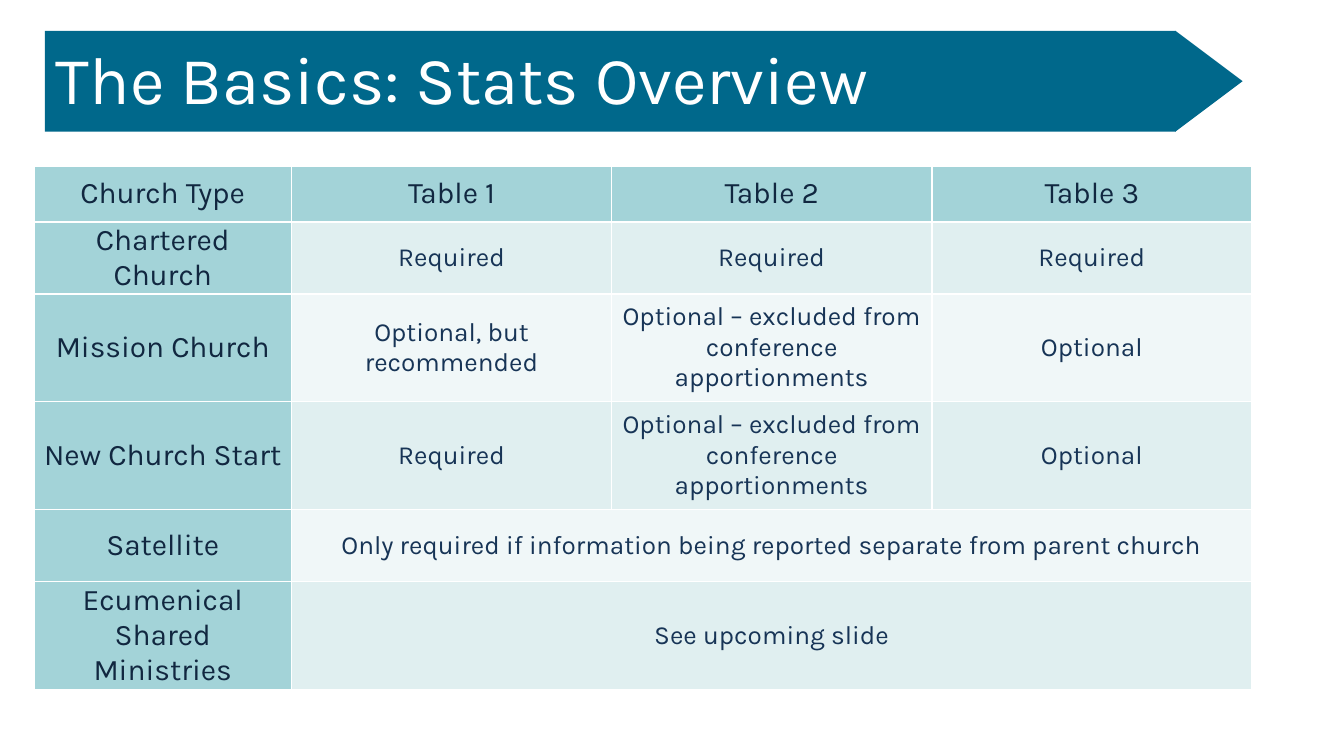
from lxml.etree import SubElement
from pptx import Presentation
from pptx.dml.color import RGBColor
from pptx.enum.shapes import MSO_SHAPE
from pptx.enum.text import MSO_ANCHOR, MSO_AUTO_SIZE, PP_ALIGN
from pptx.oxml.ns import qn
from pptx.util import Pt

TITLE = "The Basics: Stats Overview"
HEADER = ["Church Type", "Table 1", "Table 2", "Table 3"]
EXCLUDED = "Optional – excluded from conference apportionments"
# A row with a single requirement spans all three table columns.
CHURCHES = [
    ("Chartered Church", ["Required", "Required", "Required"]),
    ("Mission Church", ["Optional, but recommended", EXCLUDED, "Optional"]),
    ("New Church Start", ["Required", EXCLUDED, "Optional"]),
    ("Satellite", ["Only required if information being reported separate from parent church"]),
    ("Ecumenical Shared Ministries", ["See upcoming slide"]),
]
COLUMN_WIDTHS = [138, 171.5, 171.5, 171.5]
ROW_HEIGHTS = [30, 38.6, 57.8, 57.8, 38.6, 57.8]

FONT = "Karla"
WHITE = RGBColor(0xFF, 0xFF, 0xFF)
BANNER_BLUE = RGBColor(0x00, 0x68, 0x8B)
HEADING_FILL = RGBColor(0xA3, 0xD3, 0xD8)
HEADING_TEXT = RGBColor(0x11, 0x27, 0x40)
BODY_TEXT = RGBColor(0x17, 0x34, 0x56)
BAND_FILLS = [RGBColor(0xE0, 0xEF, 0xF0), RGBColor(0xF0, 0xF7, 0xF8)]


def style_text(paragraph, size, color, align):
    paragraph.alignment = align
    font = paragraph.runs[0].font
    font.name, font.size, font.color.rgb = FONT, Pt(size), color


def add_banner_part(slide, preset, left, top, width, height, rotation=0):
    """Add one banner shape beneath the title."""
    part = slide.shapes.add_shape(preset, Pt(left), Pt(top), Pt(width), Pt(height))
    part.rotation = rotation
    part.shadow.inherit = False
    part.fill.solid()
    part.fill.fore_color.rgb = BANNER_BLUE
    part.line.fill.background()
    slide.shapes.title.element.addprevious(part.element)


def style_cell(cell, fill):
    cell.margin_left = cell.margin_right = Pt(5.4)
    cell.margin_top = cell.margin_bottom = 0
    cell.vertical_anchor = MSO_ANCHOR.MIDDLE
    properties = cell._tc.get_or_add_tcPr()
    for side in ("a:lnL", "a:lnR", "a:lnT", "a:lnB"):
        border = SubElement(properties, qn(side), w=str(Pt(1)))
        solid = SubElement(border, qn("a:solidFill"))
        SubElement(solid, qn("a:srgbClr"), val=str(WHITE))
    cell.fill.solid()
    cell.fill.fore_color.rgb = fill


def fill_cell(cell, text, size, color):
    cell.text_frame.text = text
    style_text(cell.text_frame.paragraphs[0], size, color, PP_ALIGN.CENTER)


def add_title(slide):
    title = slide.shapes.title
    title.left, title.top, title.width, title.height = Pt(30), Pt(22.3), Pt(689), Pt(39)
    frame = title.text_frame
    frame.text = TITLE
    frame.margin_left = frame.margin_right = frame.margin_top = frame.margin_bottom = 0
    frame.vertical_anchor = MSO_ANCHOR.MIDDLE
    frame.auto_size = MSO_AUTO_SIZE.NONE
    style_text(frame.paragraphs[0], 36, WHITE, PP_ALIGN.LEFT)
    add_banner_part(slide, MSO_SHAPE.RECTANGLE, 24, 16.5, 606, 54)
    add_banner_part(slide, MSO_SHAPE.ISOSCELES_TRIANGLE, 620.7, 25.5, 54, 36, rotation=90)


def add_requirements(slide):
    table = slide.shapes.add_table(
        len(ROW_HEIGHTS), len(COLUMN_WIDTHS), Pt(18.2), Pt(88.8),
        Pt(sum(COLUMN_WIDTHS)), Pt(sum(ROW_HEIGHTS))).table
    for column, width in zip(table.columns, COLUMN_WIDTHS):
        column.width = Pt(width)
    for row, height in zip(table.rows, ROW_HEIGHTS):
        row.height = Pt(height)

    for r in range(len(ROW_HEIGHTS)):
        for c in range(len(COLUMN_WIDTHS)):
            is_heading = r == 0 or c == 0
            style_cell(table.cell(r, c), HEADING_FILL if is_heading else BAND_FILLS[(r - 1) % 2])

    for c, heading in enumerate(HEADER):
        fill_cell(table.cell(0, c), heading, 16, HEADING_TEXT)
    for r, (church, requirements) in enumerate(CHURCHES, start=1):
        fill_cell(table.cell(r, 0), church, 16, HEADING_TEXT)
        if len(requirements) == 1:
            table.cell(r, 1).merge(table.cell(r, len(HEADER) - 1))
        for c, requirement in enumerate(requirements, start=1):
            fill_cell(table.cell(r, c), requirement, 14, BODY_TEXT)


def main():
    presentation = Presentation()
    presentation.slide_width, presentation.slide_height = Pt(720), Pt(405)
    slide = presentation.slides.add_slide(presentation.slide_layouts[5])
    add_title(slide)
    add_requirements(slide)
    presentation.save("out.pptx")


if __name__ == "__main__":
    main()
